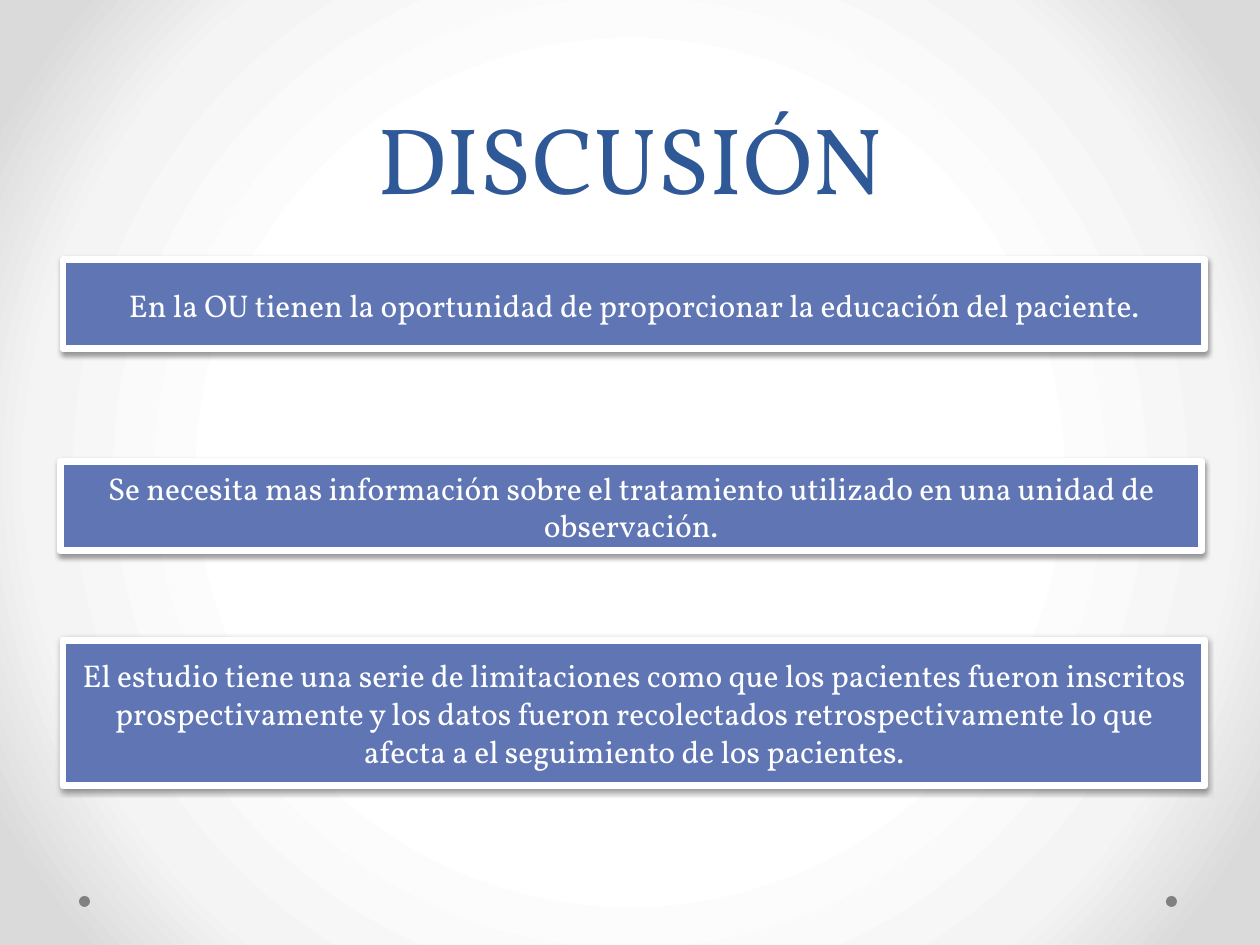
"""Build the DISCUSIÓN slide: a title over three framed statements."""
from dataclasses import dataclass

from pptx import Presentation
from pptx.dml.color import RGBColor
from pptx.enum.shapes import MSO_SHAPE
from pptx.enum.text import MSO_ANCHOR, PP_ALIGN
from pptx.oxml import parse_xml
from pptx.util import Pt

RECT, OVAL = MSO_SHAPE.RECTANGLE, MSO_SHAPE.OVAL
MID, LOW = MSO_ANCHOR.MIDDLE, MSO_ANCHOR.BOTTOM
MAIN = PP_ALIGN.CENTER
FONT = "Vollkorn"
NS = 'xmlns:a="http://schemas.openxmlformats.org/drawingml/2006/main"'
HUES = {
    "title": "2F5897", "panel": "6076B4", "white": "FFFFFF", "dot": "808080",
    "shade": "000000", "pale": "F4F4F4", "edge": "DADADA",
}
STOPS = ((50, "white"), (76, "pale"), (92, "edge"))


@dataclass(frozen=True)
class Box:
    left: int
    top: int
    width: int
    height: int
    text: str = ""


TITLE = Box(63, 0, 1134, 220, "DISCUSIÓN")
PANELS = (
    Box(63, 260, 1142, 89,
        "En la OU tienen la oportunidad de proporcionar la educación del paciente."),
    Box(60, 462, 1142, 89,
        "Se necesita mas información sobre el tratamiento utilizado en una unidad "
        "de observación."),
    Box(63, 640, 1142, 146,
        "El estudio tiene una serie de limitaciones como que los pacientes fueron "
        "inscritos prospectivamente y los datos fueron recolectados "
        "retrospectivamente lo que afecta a el seguimiento de los pacientes."),
)
DOTS = tuple(Box(left, 896, 11, 11) for left in (1166, 79))


def px(num: int) -> int:
    """Turn pixels into EMU."""
    return round(num * 914400 / 126)


def place(box: Box) -> tuple[int, ...]:
    """Return the position and size of a box in EMU."""
    return tuple(map(px, (box.left, box.top, box.width, box.height)))


def tint(name: str) -> RGBColor:
    """Look up a named colour."""
    return RGBColor.from_string(HUES[name])


def style(item: object, form: dict) -> None:
    """Set each attribute named in the format."""
    for key, val in form.items():
        setattr(item, key, val)


def write(shape, text: str, size: int, hue: str, anchor: MSO_ANCHOR):
    """Write one centred paragraph and return it."""
    frame = shape.text_frame
    style(frame, {"word_wrap": True, "vertical_anchor": anchor})
    para = frame.paragraphs[0]
    para.alignment = MAIN
    run = para.add_run()
    run.text = text
    style(run.font, {"name": FONT, "size": Pt(size)})
    run.font.color.rgb = tint(hue)
    return para


def solid(slide, kind: MSO_SHAPE, box: Box, hue: str):
    """Add a filled shape with neither line nor shadow."""
    shape = slide.shapes.add_shape(kind, *place(box))
    shape.shadow.inherit = False
    shape.fill.solid()
    shape.fill.fore_color.rgb = tint(hue)
    shape.line.fill.background()
    return shape


def panel(slide, box: Box) -> None:
    """Add a framed statement with a soft shadow."""
    shape = solid(slide, RECT, box, "panel")
    shape.line.color.rgb = tint("white")
    shape.line.width = Pt(4)
    glow = parse_xml(
        f'<a:outerShdw {NS} blurRad="{Pt(3.1)}" dist="{Pt(1.6)}" dir="5400000" '
        f'rotWithShape="0"><a:srgbClr val="{HUES["shade"]}">'
        '<a:alpha val="38000"/></a:srgbClr></a:outerShdw>')
    shape.element.spPr.find("{*}effectLst").append(glow)
    write(shape, box.text, 18, "white", MID)


def shade(slide) -> None:
    """Give the slide a round gradient."""
    fill = slide.background.fill
    fill.gradient()
    old = slide.element.find(".//{*}bgPr/{*}gradFill")
    stops = "".join(
        f'<a:gs pos="{pos * 1000}"><a:srgbClr val="{HUES[hue]}"/></a:gs>'
        for pos, hue in STOPS)
    new = parse_xml(
        f'<a:gradFill {NS} rotWithShape="1"><a:gsLst>{stops}</a:gsLst>'
        '<a:path path="circle"><a:fillToRect l="50000" t="50000" r="50000" '
        'b="50000"/></a:path></a:gradFill>')
    old.getparent().replace(old, new)


def main() -> None:
    """Build and save the slide."""
    deck = Presentation()
    style(deck, {"slide_width": px(1260), "slide_height": px(945)})
    slide = deck.slides.add_slide(deck.slide_layouts[6])
    shade(slide)
    for dot in DOTS:
        solid(slide, OVAL, dot, "dot")
    head = slide.shapes.add_textbox(*place(TITLE))
    para = write(head, TITLE.text, 54, "title", LOW)
    para.line_spacing = Pt(58)
    for box in PANELS:
        panel(slide, box)
    deck.save("out.pptx")


if __name__ == "__main__":
    main()
